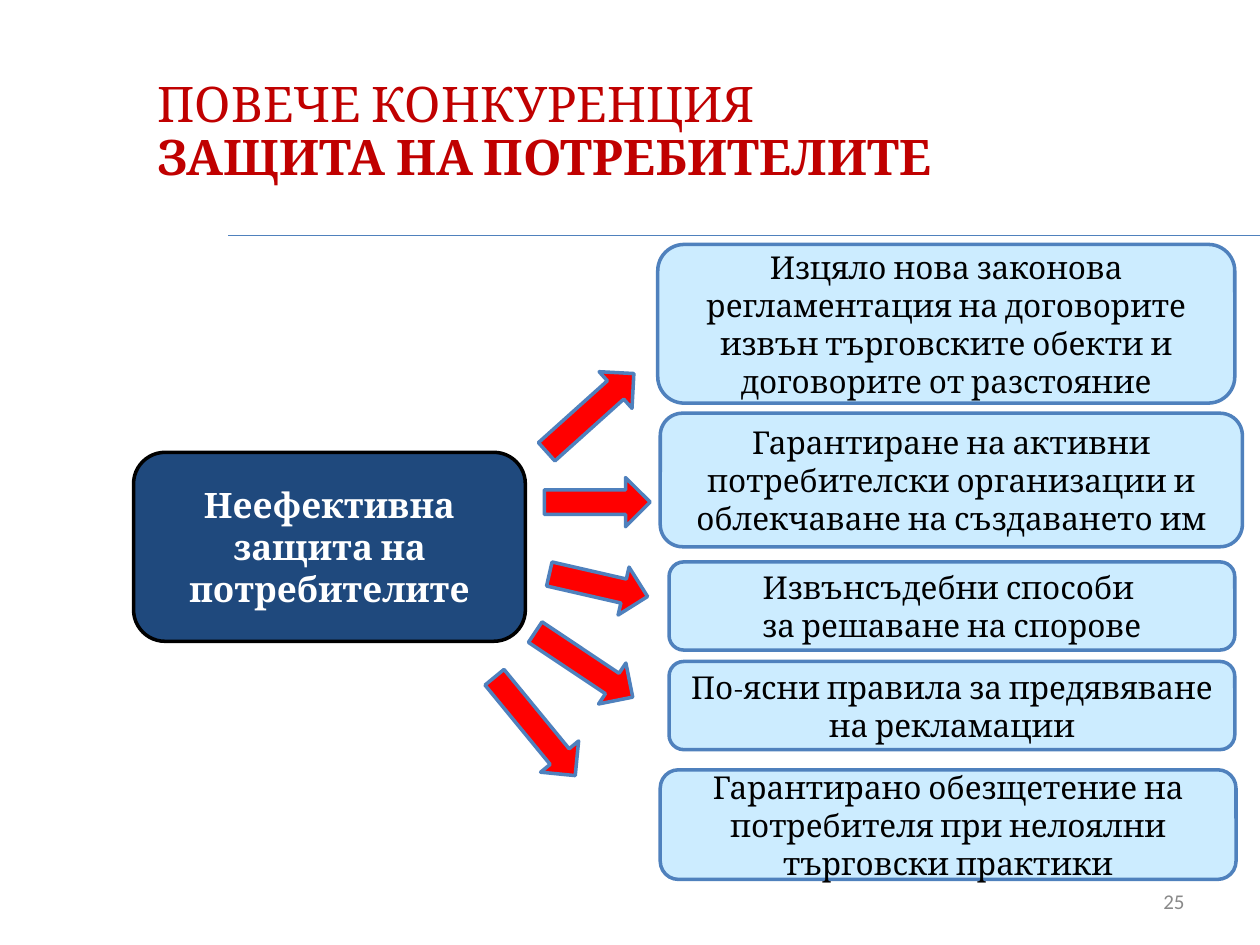
from lxml import etree
from pptx import Presentation
from pptx.dml.color import RGBColor
from pptx.enum.shapes import MSO_CONNECTOR, MSO_SHAPE
from pptx.enum.text import MSO_ANCHOR, MSO_AUTO_SIZE, PP_ALIGN
from pptx.oxml.ns import qn
from pptx.util import Inches, Pt

ROUNDED, ARROW = MSO_SHAPE.ROUNDED_RECTANGLE, MSO_SHAPE.RIGHT_ARROW
LEFT, CENTER, RIGHT = PP_ALIGN.LEFT, PP_ALIGN.CENTER, PP_ALIGN.RIGHT
MIDDLE, BOTTOM = MSO_ANCHOR.MIDDLE, MSO_ANCHOR.BOTTOM

BLUE = RGBColor(0x4F, 0x81, 0xBD)
NAVY = RGBColor(0x1F, 0x49, 0x7D)
PALE = RGBColor(0xCC, 0xEC, 0xFF)
RED = RGBColor(0xFF, 0x00, 0x00)
DARK_RED = RGBColor(0xC0, 0x00, 0x00)
GREY = RGBColor(0x89, 0x89, 0x89)
BLACK = RGBColor(0x00, 0x00, 0x00)
WHITE = RGBColor(0xFF, 0xFF, 0xFF)

SLIDE_W, SLIDE_H = 10, 7.5
RULE_LEFT, RULE_Y = 1.81, 1.87
ARROW_H = 0.39

TITLE = ["ПОВЕЧЕ КОНКУРЕНЦИЯ", "ЗАЩИТА НА ПОТРЕБИТЕЛИТЕ"]
PROBLEM = ["Неефективна защита на потребителите"]
PAGE_NUMBER = ["25"]

# Measure lines, then left, top, width, height
MEASURES = [
    (["Изцяло нова законова регламентация на договорите "
      "извън търговските обекти и договорите от разстояние"],
     (5.22, 1.94, 4.58, 1.26)),
    (["Гарантиране на активни потребителски организации "
      "и облекчаване на създаването им"],
     (5.24, 3.28, 4.62, 1.06)),
    (["Извънсъдебни способи ", "за решаване на спорове"],
     (5.31, 4.46, 4.49, 0.7)),
    (["По-ясни правила за предявяване на рекламации"],
     (5.31, 5.25, 4.49, 0.7)),
    (["Гарантирано обезщетение на потребителя "
      "при нелоялни търговски практики"],
     (5.24, 6.11, 4.57, 0.87)),
]
# Left, top, width, rotation, from the upper arrow to the lower one
ARROWS = [
    (4.22, 3.08, 0.93, 318.1),
    (4.32, 3.79, 0.84, 0),
    (4.35, 4.45, 0.8, 12.9),
    (4.17, 5.08, 0.93, 33.7),
    (3.74, 5.57, 1.01, 50.6),
]

TITLE_FONT = {"name": "Cambria", "size": Pt(28), "bold": False}
MEASURE_FONT = {"name": "Cambria", "size": Pt(18)}
PROBLEM_FONT = {"name": "Cambria", "size": Pt(20), "bold": True}
NUMBER_FONT = {"name": "Calibri", "size": Pt(12)}


def write(frame, lines, font, color, align, anchor=MIDDLE):
    frame.word_wrap = True
    frame.auto_size = MSO_AUTO_SIZE.NONE
    frame.vertical_anchor = anchor
    frame.text = "\n".join(lines)
    for paragraph in frame.paragraphs:
        paragraph.alignment = align
        for name, value in font.items():
            setattr(paragraph.font, name, value)
        paragraph.font.color.rgb = color


def add_block(slide, kind, place, fill, outline):
    block = slide.shapes.add_shape(kind, *map(Inches, place))
    block.shadow.inherit = False
    block.fill.solid()
    block.fill.fore_color.rgb = fill
    block.line.color.rgb = outline
    block.line.width = Pt(2)
    return block


def add_title(slide):
    title = slide.shapes.title
    title.left, title.top, title.width, title.height = map(
        Inches, (1.15, 0.15, 8.07, 1.33))
    frame = title.text_frame
    write(frame, TITLE, TITLE_FONT, DARK_RED, LEFT, BOTTOM)
    frame.margin_bottom = 0
    for paragraph in frame.paragraphs:
        paragraph.line_spacing = 0.9
    frame.paragraphs[-1].font.bold = True


def add_rule(slide):
    rule = slide.shapes.add_connector(
        MSO_CONNECTOR.STRAIGHT,
        *map(Inches, (RULE_LEFT, RULE_Y, SLIDE_W, RULE_Y)))
    rule.line.color.rgb = BLUE
    rule.line.width = Pt(1)
    etree.SubElement(rule._element.spPr, qn("a:effectLst"))


def main():
    deck = Presentation()
    deck.slide_width, deck.slide_height = Inches(SLIDE_W), Inches(SLIDE_H)
    slide = deck.slides.add_slide(deck.slide_layouts[5])

    add_title(slide)
    add_rule(slide)

    number = slide.shapes.add_textbox(*map(Inches, (7.17, 6.95, 2.33, 0.4)))
    write(number.text_frame, PAGE_NUMBER, NUMBER_FONT, GREY, RIGHT)

    for lines, place in MEASURES:
        measure = add_block(slide, ROUNDED, place, PALE, BLUE)
        write(measure.text_frame, lines, MEASURE_FONT, BLACK, CENTER)

    problem = add_block(slide, ROUNDED, (1.06, 3.59, 3.11, 1.5), NAVY, BLACK)
    write(problem.text_frame, PROBLEM, PROBLEM_FONT, WHITE, CENTER)

    for left, top, width, angle in ARROWS:
        arrow = add_block(slide, ARROW, (left, top, width, ARROW_H), RED, BLUE)
        arrow.rotation = angle

    deck.save("out.pptx")


if __name__ == "__main__":
    main()
